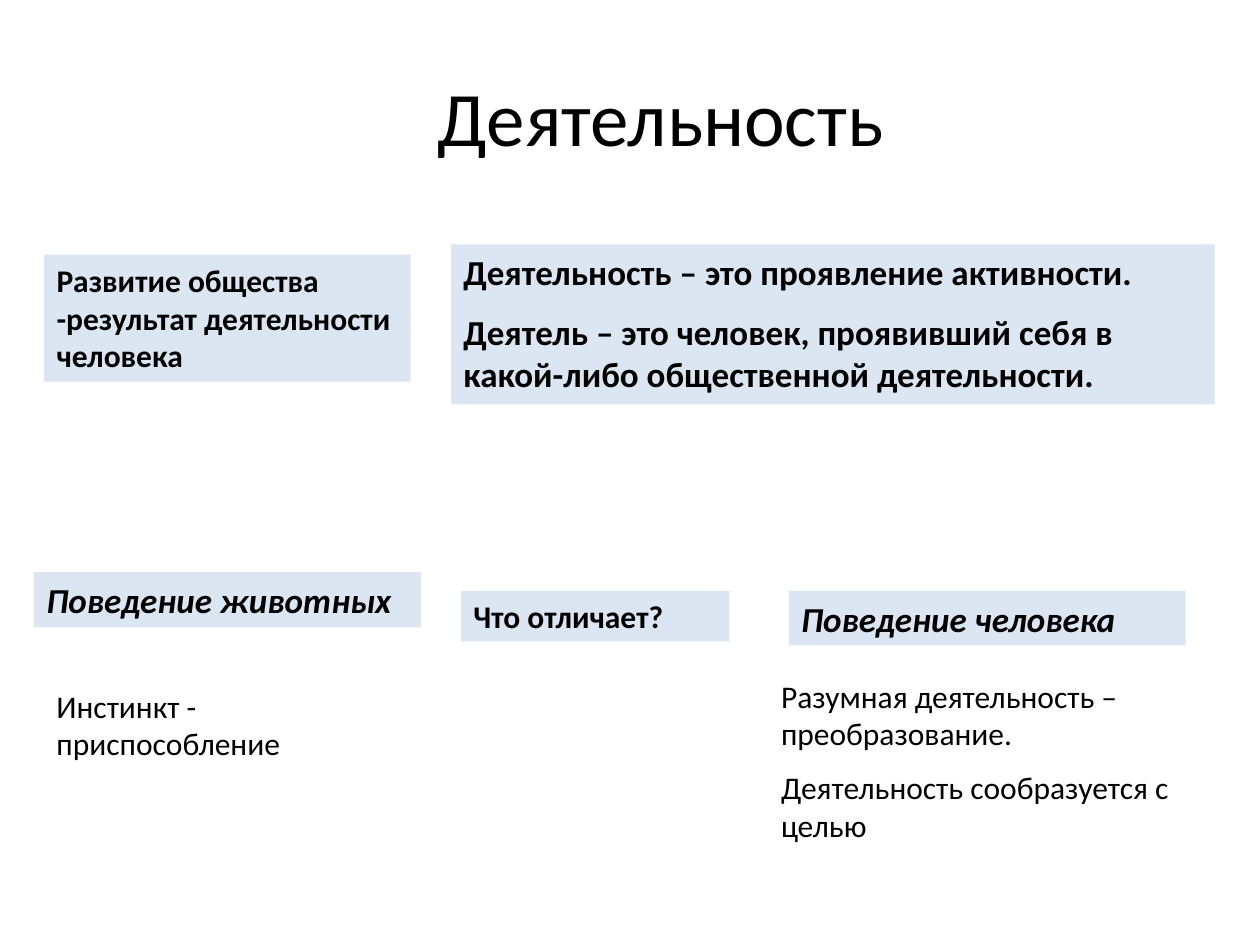
from pptx import Presentation
from pptx.dml.color import RGBColor
from pptx.enum.shapes import MSO_SHAPE as Shape
from pptx.enum.text import MSO_ANCHOR as Anchor, MSO_AUTO_SIZE as Fit, PP_ALIGN as Align
from pptx.util import Inches, Pt

BLACK = RGBColor(0x00, 0x00, 0x00)
PALE = RGBColor(0xDC, 0xE6, 0xF2)
FONT = "Calibri"


def write(frame, lines, size, bold=False, italic=False, align=Align.LEFT):
    """Fill a text frame with one paragraph per line, half a line apart."""
    frame.word_wrap = True
    frame.vertical_anchor = Anchor.TOP
    for i, line in enumerate(lines):
        para = frame.paragraphs[0] if i == 0 else frame.add_paragraph()
        para.alignment = align
        if i:
            para.space_before = Pt(size / 2)
        run = para.add_run()
        run.text = line
        font = run.font
        font.name, font.size = FONT, Pt(size)
        font.bold, font.italic = bold, italic
        font.color.rgb = BLACK


def add_panel(slide, box, lines, size, italic=False):
    """Place a pale panel with bold text in the box."""
    panel = slide.shapes.add_shape(Shape.RECTANGLE, *map(Inches, box))
    panel.shadow.inherit = False
    panel.fill.solid()
    panel.fill.fore_color.rgb = PALE
    panel.line.fill.background()
    write(panel.text_frame, lines, size, True, italic)
    panel.text_frame.auto_size = Fit.SHAPE_TO_FIT_TEXT


def add_note(slide, box, lines):
    """Place plain text in the box."""
    note = slide.shapes.add_textbox(*map(Inches, box))
    write(note.text_frame, lines, 18)
    note.text_frame.auto_size = Fit.SHAPE_TO_FIT_TEXT


def add_title(slide, box):
    """Place the centred slide title in the box."""
    frame = slide.shapes.add_textbox(*map(Inches, box)).text_frame
    write(frame, ["Деятельность"], 44, align=Align.CENTER)
    frame.vertical_anchor = Anchor.MIDDLE


def add_terms(slide, box):
    """Place the result and the definitions side by side in the box."""
    left, top, width, height = box
    add_panel(slide, (left, top + 0.08, 2.91, 1.01),
              ["Развитие общества -результат деятельности человека"], 18)
    add_panel(slide, (left + 3.23, top, width - 3.23, height),
              ["Деятельность – это проявление активности.",
               "Деятель – это человек, проявивший себя в какой-либо "
               "общественной деятельности."], 20)


def add_contrast(slide, box):
    """Place animal and human behaviour around the question in the box."""
    left, top, width, height = box
    right = left + width
    add_panel(slide, (left, top, 3.07, 0.44), ["Поведение животных"], 20, True)
    add_panel(slide, (left + 3.39, top + 0.15, 2.13, 0.4), ["Что отличает?"], 18)
    add_panel(slide, (right - 3.23, top + 0.15, 3.15, 0.43),
              ["Поведение человека"], 20, True)
    add_note(slide, (left + 0.08, top + 0.86, 2.36, 0.7),
             ["Инстинкт - приспособление"])
    add_note(slide, (right - 3.39, top + 0.78, 3.39, height - 0.78),
             ["Разумная деятельность – преобразование.",
              "Деятельность сообразуется с целью"])


def main():
    """Build the slide and save it."""
    deck = Presentation()
    deck.slide_width, deck.slide_height = Inches(10), Inches(7.5)
    slide = deck.slides.add_slide(deck.slide_layouts[6])
    add_title(slide, (0.83, 0.29, 8.83, 1.25))
    add_terms(slide, (0.35, 1.94, 9.29, 1.27))
    add_contrast(slide, (0.27, 4.54, 9.22, 2.23))
    deck.save("out.pptx")


if __name__ == "__main__":
    main()
